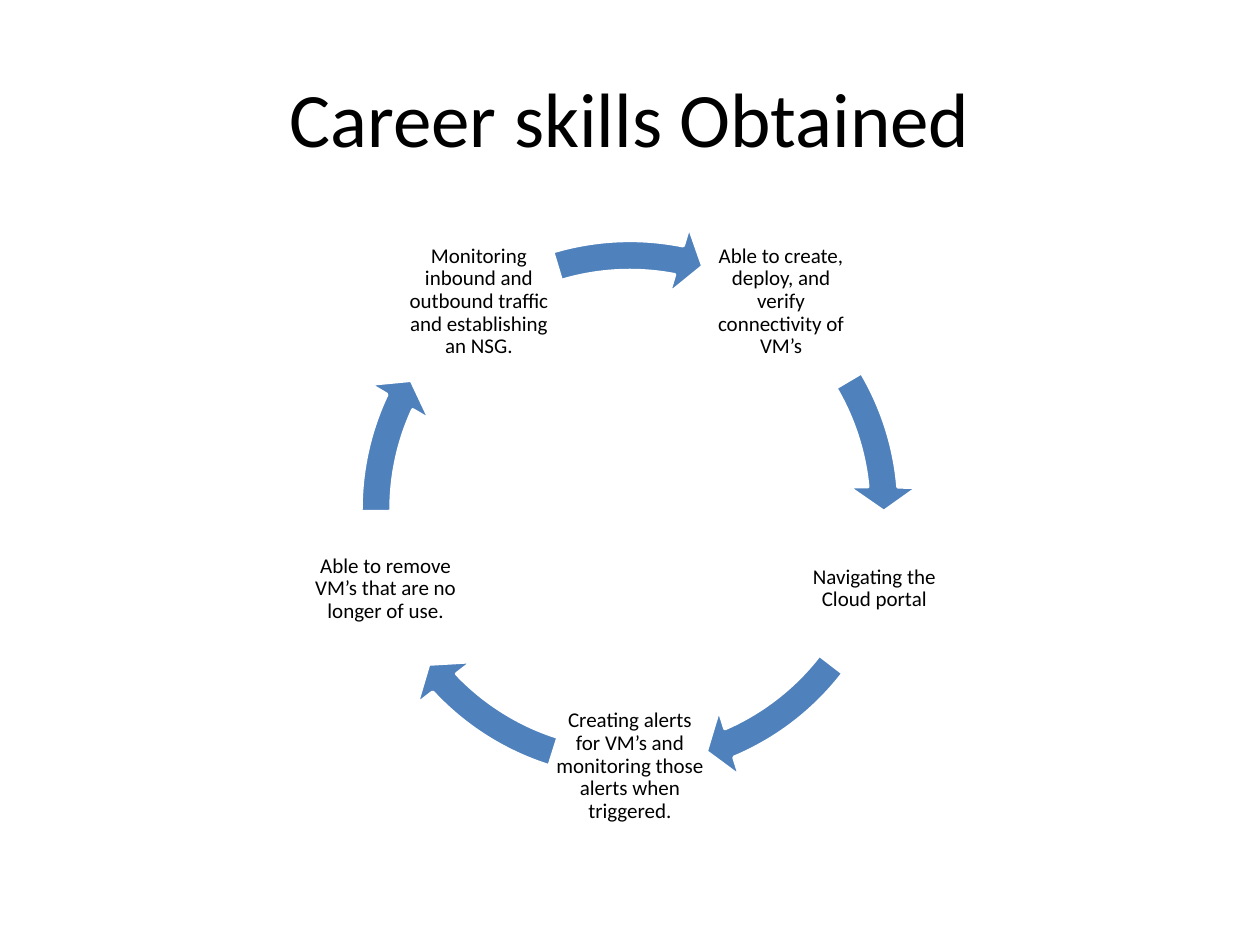
"""Build the career skills cycle slide."""
import math
from dataclasses import dataclass

from pptx import Presentation
from pptx import util as u
from pptx.dml.color import RGBColor
from pptx.enum import shapes, text
from pptx.shapes.shapetree import GroupShapes


@dataclass(frozen=True)
class Theme:
    """Colours and type sizes of the slide."""
    ink: RGBColor = RGBColor(0x00, 0x00, 0x00)
    arrow: RGBColor = RGBColor(0x4F, 0x81, 0xBD)
    edge: RGBColor = RGBColor(0xFF, 0xFF, 0xFF)
    font: str = "Calibri"
    title: u.Pt = u.Pt(44)
    body: u.Pt = u.Pt(12)


@dataclass(frozen=True)
class Skill:
    """A skill on the cycle and the angles of the arrow that leaves it."""
    wording: str
    start: float
    end: float


THEME = Theme()
CENTRE_X, CENTRE_Y, RADIUS = 12.7, 10.27, 5.18
SKILL_SIDE, RING_SIDE = 3.1, 11.66
FIRST_ANGLE = -54
RAW_DEGREE = 0.6
TITLE_PLACE = {"left": u.Cm(1.27), "top": u.Cm(0.76),
               "width": u.Cm(22.86), "height": u.Cm(3.18)}
SKILL_FRAME = {"word_wrap": True, "vertical_anchor": text.MSO_ANCHOR.MIDDLE,
               **{f"margin_{side}": u.Cm(0.05) for side in ("left", "top", "right", "bottom")}}
SKILL_PARAGRAPH = {"alignment": text.PP_ALIGN.CENTER, "line_spacing": 0.9,
                   "space_after": u.Pt(4.2)}

SKILLS = (
    Skill("Able to create, deploy, and verify connectivity of VM’s", 329.43, 354.9),
    Skill("Navigating the Cloud portal", 37.55, 66.93),
    Skill("Creating alerts for VM’s and monitoring those alerts when triggered.", 107.48, 136.86),
    Skill("Able to remove VM’s that are no longer of use.", 179.5, 204.98),
    Skill("Monitoring inbound and outbound traffic and establishing an NSG.", 253.3, 281.11),
)


def apply(target: object, values: dict) -> None:
    """Set each named format value on the target."""
    for name, value in values.items():
        setattr(target, name, value)


def write(frame, wording: str, size: u.Pt, paragraph_format: dict) -> None:
    """Put one formatted paragraph in a text frame."""
    paragraph = frame.paragraphs[0]
    apply(paragraph, paragraph_format)
    run = paragraph.add_run()
    run.text = wording
    apply(run.font, {"name": THEME.font, "size": size})
    run.font.color.rgb = THEME.ink


def square(x: float, y: float, side: float) -> tuple:
    """Return the place of a square centred on a point."""
    return u.Cm(x - side / 2), u.Cm(y - side / 2), u.Cm(side), u.Cm(side)


def draw_skill(cycle: GroupShapes, skill: Skill, angle: float) -> None:
    """Write a skill at its angle on the cycle."""
    x = CENTRE_X + RADIUS * math.cos(math.radians(angle))
    y = CENTRE_Y + RADIUS * math.sin(math.radians(angle))
    frame = cycle.add_textbox(*square(x, y, SKILL_SIDE)).text_frame
    apply(frame, SKILL_FRAME)
    write(frame, skill.wording, THEME.body, SKILL_PARAGRAPH)


def draw_arrow(cycle: GroupShapes, skill: Skill) -> None:
    """Draw the arrow that leads to the next skill."""
    arrow = cycle.add_shape(shapes.MSO_SHAPE.CIRCULAR_ARROW,
                            *square(CENTRE_X, CENTRE_Y, RING_SIDE))
    bends = (0.052, 5.6 * RAW_DEGREE, skill.end * RAW_DEGREE, skill.start * RAW_DEGREE, 0.061)
    for index, bend in enumerate(bends):
        arrow.adjustments[index] = bend
    arrow.shadow.inherit = False
    arrow.fill.solid()
    arrow.fill.fore_color.rgb = THEME.arrow
    arrow.line.color.rgb = THEME.edge
    arrow.line.width = u.Pt(2)


def main() -> None:
    """Build and save the slide."""
    deck = Presentation()
    apply(deck, {"slide_width": u.Cm(25.4), "slide_height": u.Cm(19.05)})
    slide = deck.slides.add_slide(deck.slide_layouts[5])
    heading = slide.shapes.title
    apply(heading, TITLE_PLACE)
    heading.text_frame.vertical_anchor = text.MSO_ANCHOR.MIDDLE
    write(heading.text_frame, "Career skills Obtained", THEME.title,
          {"alignment": text.PP_ALIGN.CENTER})
    cycle = slide.shapes.add_group_shape().shapes
    for index, skill in enumerate(SKILLS):
        draw_skill(cycle, skill, FIRST_ANGLE + index * 360 / len(SKILLS))
        draw_arrow(cycle, skill)
    deck.save("out.pptx")


if __name__ == "__main__":
    main()
